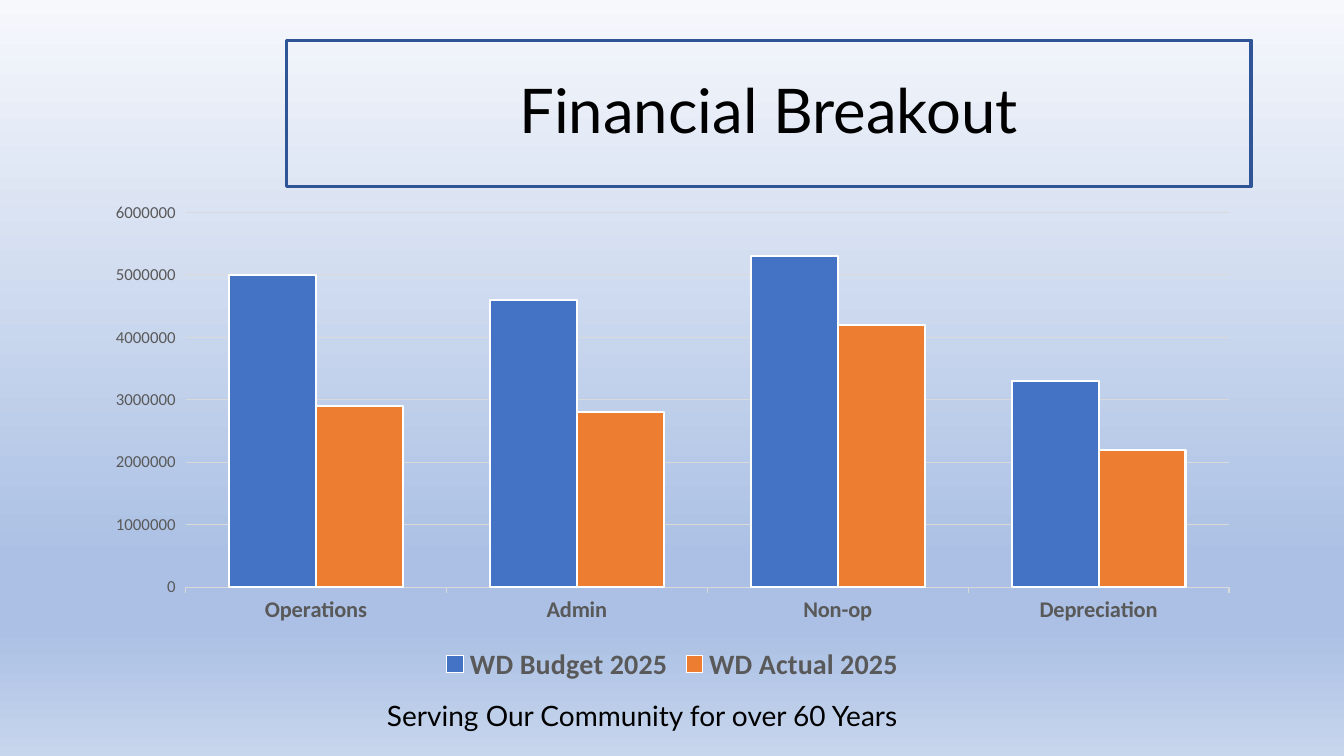
from copy import deepcopy

from pptx import Presentation
from pptx.chart.data import CategoryChartData
from pptx.dml.color import RGBColor
from pptx.enum.chart import XL_CHART_TYPE, XL_LEGEND_POSITION, XL_TICK_MARK
from pptx.enum.shapes import MSO_SHAPE
from pptx.enum.text import MSO_ANCHOR, MSO_AUTO_SIZE, PP_ALIGN
from pptx.oxml.ns import qn
from pptx.util import Inches, Pt

COLORS = {
    "text": "000000", "title_border": "2F5597", "label": "595959",
    "grid": "D9D9D9", "budget": "4472C4", "actual": "ED7D31", "bar_border": "FFFFFF",
}
BACKGROUND = [(0, "F6F8FC"), (74, "ABC0E4"), (83, "ABC0E4"), (100, "C7D5ED")]
TITLE = "Financial Breakout"
MOTTO = "Serving Our Community for over 60 Years"
CATEGORIES = ["Operations", "Admin", "Non-op", "Depreciation"]
SERIES = [
    ("WD Budget 2025", "budget", (5000000, 4600000, 5300000, 3300000)),
    ("WD Actual 2025", "actual", (2900000, 2800000, 4200000, 2200000)),
]
PLACES = {
    "title": (2.84, 0.4, 9.57, 1.45),
    "chart": (0.92, 1.91, 11.5, 4.91),
    "motto": (3.74, 6.88, 5.5, 0.44),
}


def place(name):
    return [Inches(length) for length in PLACES[name]]


def set_font(font, size, color, name="Calibri", bold=False):
    font.size, font.name, font.bold = Pt(size), name, bold
    font.color.rgb = RGBColor.from_string(COLORS[color])


def set_line(line, color, width):
    line.color.rgb = RGBColor.from_string(COLORS[color])
    line.width = Pt(width)


def write(box, text, size, align=PP_ALIGN.LEFT, anchor=MSO_ANCHOR.TOP, wrap=True, spacing=1.0):
    frame = box.text_frame
    frame.word_wrap, frame.vertical_anchor = wrap, anchor
    para = frame.paragraphs[0]
    para.alignment, para.line_spacing = align, spacing
    span = para.add_run()
    span.text = text
    set_font(span.font, size, "text", name="Lato")


def paint_background(page):
    fill = page.background.fill
    fill.gradient()
    fill.gradient_angle = 270
    stops = page.element.find(".//" + qn("a:gsLst"))
    for _ in range(len(BACKGROUND) - len(stops)):
        stops.append(deepcopy(stops[0]))
    for stop, (position, color) in zip(fill.gradient_stops, BACKGROUND):
        stop.position = position / 100
        stop.color.rgb = RGBColor.from_string(color)


def add_title(page):
    box = page.shapes.add_shape(MSO_SHAPE.RECTANGLE, *place("title"))
    box.shadow.inherit = False
    box.fill.background()
    set_line(box.line, "title_border", 2.5)
    write(box, TITLE, 44, align=PP_ALIGN.CENTER, anchor=MSO_ANCHOR.MIDDLE, spacing=0.9)


def add_budget_chart(page):
    data = CategoryChartData()
    data.categories = CATEGORIES
    for name, _, values in SERIES:
        data.add_series(name, values)
    chart = page.shapes.add_chart(XL_CHART_TYPE.COLUMN_CLUSTERED, *place("chart"), data).chart
    set_font(chart.font, 10, "text")
    chart.has_title = False
    chart.has_legend = True
    chart.legend.position = XL_LEGEND_POSITION.BOTTOM
    chart.legend.include_in_layout = False
    set_font(chart.legend.font, 20, "label", bold=True)

    plot = chart.plots[0]
    plot.gap_width, plot.overlap, plot.vary_by_categories = 100, 0, False
    for series, (_, color, _) in zip(plot.series, SERIES):
        series.format.fill.solid()
        series.format.fill.fore_color.rgb = RGBColor.from_string(COLORS[color])
        set_line(series.format.line, "bar_border", 1.5)

    for axis, size, bold in ((chart.category_axis, 16, True), (chart.value_axis, 12, False)):
        axis.major_tick_mark = XL_TICK_MARK.OUTSIDE
        set_font(axis.tick_labels.font, size, "label", bold=bold)
    set_line(chart.category_axis.format.line, "grid", 0.75)
    amounts = chart.value_axis
    amounts.minimum_scale, amounts.maximum_scale, amounts.major_unit = 0, 6000000, 1000000
    amounts.format.line.fill.background()
    set_line(amounts.major_gridlines.format.line, "grid", 0.75)


def add_motto(page):
    box = page.shapes.add_textbox(*place("motto"))
    write(box, MOTTO, 20, wrap=False)
    box.text_frame.auto_size = MSO_AUTO_SIZE.SHAPE_TO_FIT_TEXT


def main():
    """Build the financial breakout slide."""
    deck = Presentation()
    deck.slide_width, deck.slide_height = Inches(13.33), Inches(7.5)
    page = deck.slides.add_slide(deck.slide_layouts[6])
    paint_background(page)
    add_title(page)
    add_motto(page)
    add_budget_chart(page)
    deck.save("out.pptx")


if __name__ == "__main__":
    main()
